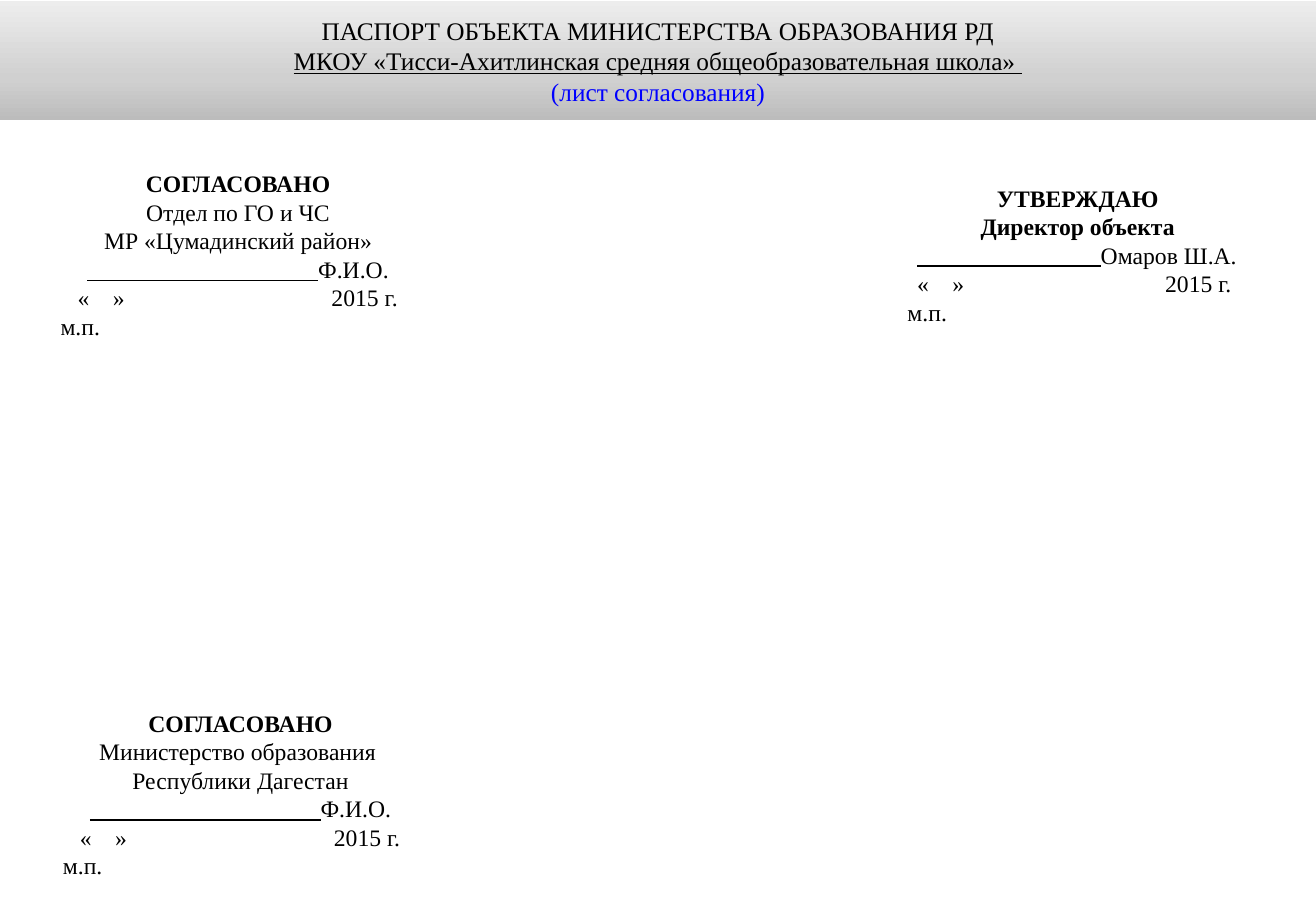
from copy import deepcopy

from pptx import Presentation
from pptx.dml.color import RGBColor
from pptx.enum.shapes import MSO_CONNECTOR as CONN, MSO_SHAPE as SHAPE
from pptx.enum.text import MSO_ANCHOR as ANCHOR, MSO_AUTO_SIZE as FIT, PP_ALIGN as ALIGN
from pptx.oxml.ns import qn
from pptx.oxml.xmlchemy import OxmlElement
from pptx.util import Inches, Pt


def rgb(value):
    return RGBColor.from_string(value)


class ApprovalSheet:
    font = "Times New Roman"
    ink = "000000"
    leading = 1.207

    def __init__(self, prs):
        self.s = prs.slides.add_slide(prs.slide_layouts[5])

    def prepare(self, sp):
        tf = sp.text_frame
        tf.word_wrap = True
        tf.auto_size = FIT.NONE
        tf.vertical_anchor = ANCHOR.MIDDLE
        return tf

    def paragraph(self, tf, i, text, size, color=None, bold=False, underline=False, tabs=()):
        """Add line i: centred, or set on tab stops (inches) when given."""
        p = tf.paragraphs[0] if i == 0 else tf.add_paragraph()
        p.alignment = ALIGN.LEFT if tabs else ALIGN.CENTER
        p.line_spacing = Pt(round(size * self.leading, 1))
        p.space_before = Pt(0)
        if tabs:
            tab_list = OxmlElement("a:tabLst")
            for pos in tabs:
                tab = OxmlElement("a:tab")
                tab.set("pos", str(Inches(pos)))
                tab.set("algn", "l")
                tab_list.append(tab)
            p._p.get_or_add_pPr().append(tab_list)
        r = p.add_run()
        r.text = text
        r.font.name = self.font
        r.font.size = Pt(size)
        r.font.bold = bold
        r.font.underline = underline
        r.font.color.rgb = rgb(color or self.ink)

    def gradient(self, sp, stops):
        """Fill a shape from bottom to top with (position, colour) stops."""
        sp.fill.gradient()
        sp.fill.gradient_angle = 90
        gs_list = sp._element.spPr.find(qn("a:gradFill")).find(qn("a:gsLst"))
        while len(gs_list) < len(stops):
            gs_list.append(deepcopy(gs_list[0]))
        for stop, (position, color) in zip(sp.fill.gradient_stops, stops):
            stop.position = position
            stop.color.rgb = rgb(color)

    def title(self, lines):
        sp = self.s.shapes.title
        sp.left, sp.top, sp.width, sp.height = (Inches(v) for v in (0, 0.01, 10.83, 0.98))
        self.gradient(sp, [(0, "BCBCBC"), (0.35, "D0D0D0"), (1, "EDEDED")])
        tf = self.prepare(sp)
        for i, (text, style) in enumerate(lines):
            self.paragraph(tf, i, text, 15, **style)

    def rule(self, left, right, y):
        line = self.s.shapes.add_connector(
            CONN.STRAIGHT, Inches(left), Inches(y), Inches(right), Inches(y))
        line.line.color.rgb = rgb(self.ink)
        line.line.width = Pt(1)
        line._element.spPr.append(OxmlElement("a:effectLst"))

    def signature(self, left, top, heading, signer, line, line_y, year_at, stamp_at):
        """Add a signature block; line holds the rule's ends from the text edge."""
        sp = self.s.shapes.add_shape(
            SHAPE.RECTANGLE, Inches(left), Inches(top), Inches(3.2), Inches(1.41))
        sp.shadow.inherit = False
        sp.fill.background()
        sp.line.color.rgb = rgb("FFFFFF")
        sp.line.width = Pt(2)
        tf = self.prepare(sp)
        rows = [(text, {"bold": bold}) for text, bold in heading] + [
            (f"\t{signer}", {"tabs": [line[1]]}),
            ("\t«\t»\t2015 г.", {"tabs": [0.18, 0.47, year_at]}),
            ("\tм.п.", {"tabs": [stamp_at]}),
        ]
        for i, (text, style) in enumerate(rows):
            self.paragraph(tf, i, text, 14, **style)
        text_left = left + 0.1
        self.rule(text_left + line[0], text_left + line[1], top + line_y)


def main():
    prs = Presentation()
    prs.slide_width, prs.slide_height = Inches(10.83), Inches(7.5)
    sheet = ApprovalSheet(prs)

    sheet.title([
        ("ПАСПОРТ ОБЪЕКТА МИНИСТЕРСТВА ОБРАЗОВАНИЯ РД", {}),
        ("МКОУ «Тисси-Ахитлинская средняя общеобразовательная школа» ", {"underline": True}),
        ("(лист согласования)", {"color": "0000FF"}),
    ])

    agreed = {"signer": "Ф.И.О.", "line": (0.26, 2.16), "line_y": 0.92,
              "year_at": 2.27, "stamp_at": 0.04}
    sheet.signature(0.36, 1.39, [
        ("СОГЛАСОВАНО", True),
        ("Отдел по ГО и ЧС", False),
        ("МР «Цумадинский район»", False),
    ], **agreed)
    sheet.signature(7.27, 1.39, [
        ("УТВЕРЖДАЮ", True),
        ("Директор объекта", True),
    ], signer="Омаров Ш.А.", line=(0.18, 1.69), line_y=0.8, year_at=2.22, stamp_at=0.1)
    sheet.signature(0.38, 5.83, [
        ("СОГЛАСОВАНО", True),
        ("Министерство образования ", False),
        ("Республики Дагестан", False),
    ], **agreed)

    prs.save("out.pptx")


if __name__ == "__main__":
    main()
